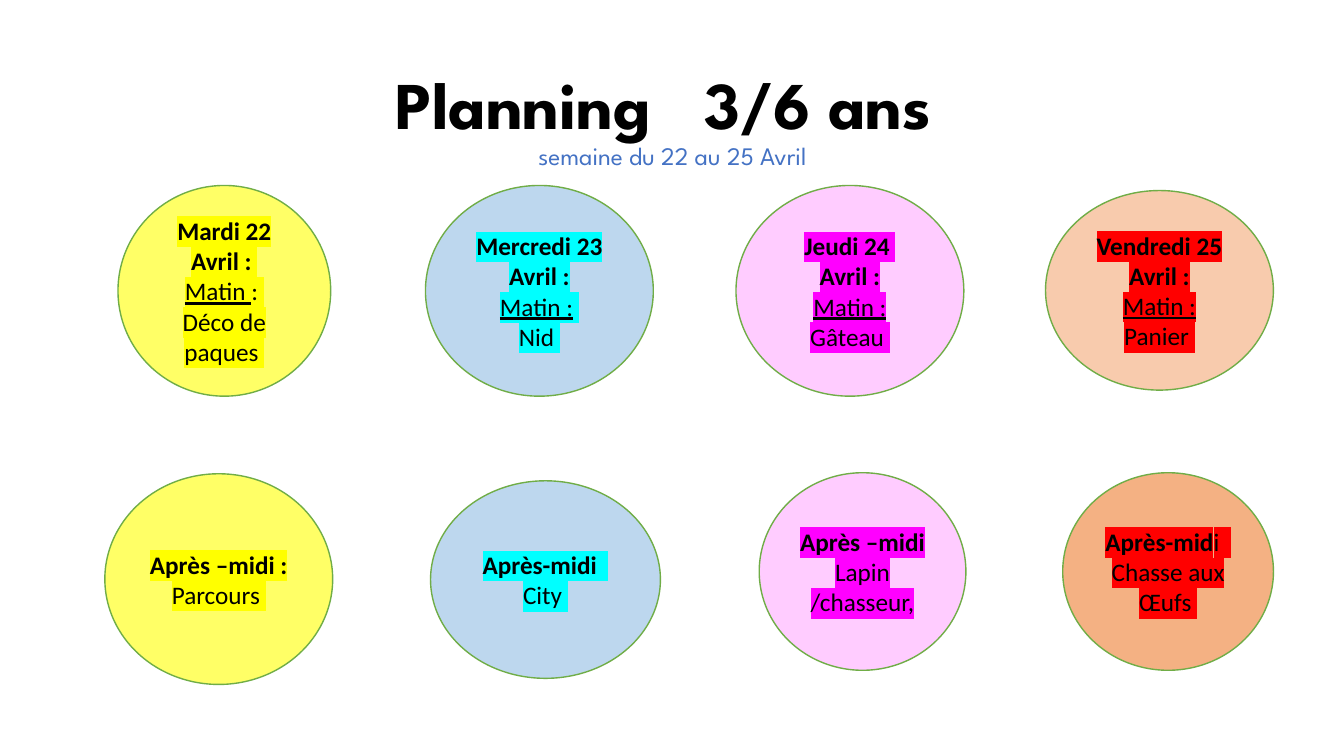
from lxml import etree
from pptx import Presentation
from pptx.dml.color import RGBColor
from pptx.enum import shapes, text
from pptx.oxml.ns import qn
from pptx.util import Inches, Pt

# Content: runs are (text, style), with style "b" bold, "u" underlined, "" plain
TITLE = "Planning   3/6 ans "
WEEK = "semaine du 22 au 25 Avril"
YELLOW, CYAN, MAGENTA, RED = "FFFF00", "00FFFF", "FF00FF", "FF0000"

# (left, top, width, height), fill, highlight, paragraphs
MORNINGS = [
    ((1.17, 1.84, 2.11, 2.09), "FFFF66", YELLOW,
     [[("Mardi 22 Avril : ", "b")], [("Matin ", "u"), (": ", "")],
      [("Déco de paques ", "")]]),
    ((4.22, 1.84, 2.26, 2.09), "BDD7EE", CYAN,
     [[("Mercredi 23 Avril :", "b")], [("Matin :", "u"), (" ", "")],
      [("Nid ", "")]]),
    ((7.3, 1.84, 2.26, 2.09), "FFCCFF", MAGENTA,
     [[("Jeudi 24  Avril :", "b")], [("Matin :", "u")], [("Gâteau ", "")]]),
    ((10.37, 1.89, 2.26, 1.98), "F8CBAD", RED,
     [[("Vendredi 25 Avril :", "b")], [("Matin :", "u")], [("Panier ", "")]]),
]
AFTERNOONS = [
    ((1.04, 4.7, 2.26, 2.09), "FFFF66", YELLOW,
     [[("Après –midi :", "b")], [("Parcours ", "")]]),
    ((4.27, 4.77, 2.28, 1.96), "BDD7EE", CYAN,
     [[("Après-midi  ", "b")], [("City ", "")]]),
    ((7.53, 4.69, 2.05, 1.96), "FFCCFF", MAGENTA,
     [[("Après –midi", "b")], [("Lapin /chasseur,", "")]]),
    ((10.54, 4.69, 2.09, 1.96), "F4B183", RED,
     [[("Après-mid", "b"), ("i  ", "")], [("Chasse aux Œufs ", "")]]),
]


def rgb(value):
    return RGBColor.from_string(value)


def add_text(paragraph, words, size=18, font="Calibri", color="000000",
             style="", highlight=None):
    run = paragraph.add_run()
    run.text = words
    run.font.size = Pt(size)
    run.font.name = font
    run.font.bold = style == "b"
    run.font.underline = style == "u"
    run.font.color.rgb = rgb(color)
    if highlight:
        mark = etree.Element(qn("a:highlight"))
        etree.SubElement(mark, qn("a:srgbClr")).set("val", highlight)
        run._r.get_or_add_rPr().find(qn("a:solidFill")).addnext(mark)


def add_bubble(slide, box, fill, highlight, paragraphs):
    bubble = slide.shapes.add_shape(shapes.MSO_SHAPE.OVAL, *map(Inches, box))
    bubble.shadow.inherit = False
    bubble.fill.solid()
    bubble.fill.fore_color.rgb = rgb(fill)
    bubble.line.color.rgb = rgb("70AD47")
    bubble.line.width = Pt(1)
    frame = bubble.text_frame
    frame.word_wrap = True
    frame.vertical_anchor = text.MSO_ANCHOR.MIDDLE
    for i, runs in enumerate(paragraphs):
        paragraph = frame.add_paragraph() if i else frame.paragraphs[0]
        paragraph.alignment = text.PP_ALIGN.CENTER
        for words, style in runs:
            add_text(paragraph, words, style=style, highlight=highlight)


def main():
    prs = Presentation()
    prs.slide_width, prs.slide_height = Inches(13.33), Inches(7.5)
    slide = prs.slides.add_slide(prs.slide_layouts[5])

    # Title and week, growing upwards from the bottom of the box
    title = slide.shapes.title
    title.left, title.top = Inches(1.67), Inches(1.23)
    title.width, title.height = Inches(10), Inches(0.52)
    frame = title.text_frame
    frame.word_wrap = True
    frame.auto_size = text.MSO_AUTO_SIZE.NONE
    frame.vertical_anchor = text.MSO_ANCHOR.BOTTOM
    heading = frame.paragraphs[0]
    heading.alignment = text.PP_ALIGN.CENTER
    heading.line_spacing = 0.9
    add_text(heading, TITLE, size=47.7, font="League Spartan", style="b")
    heading.add_line_break()
    add_text(heading, WEEK, font="League Spartan", color="4472C4")

    # One bubble per half-day
    for bubble in MORNINGS + AFTERNOONS:
        add_bubble(slide, *bubble)

    prs.save("out.pptx")


if __name__ == "__main__":
    main()
